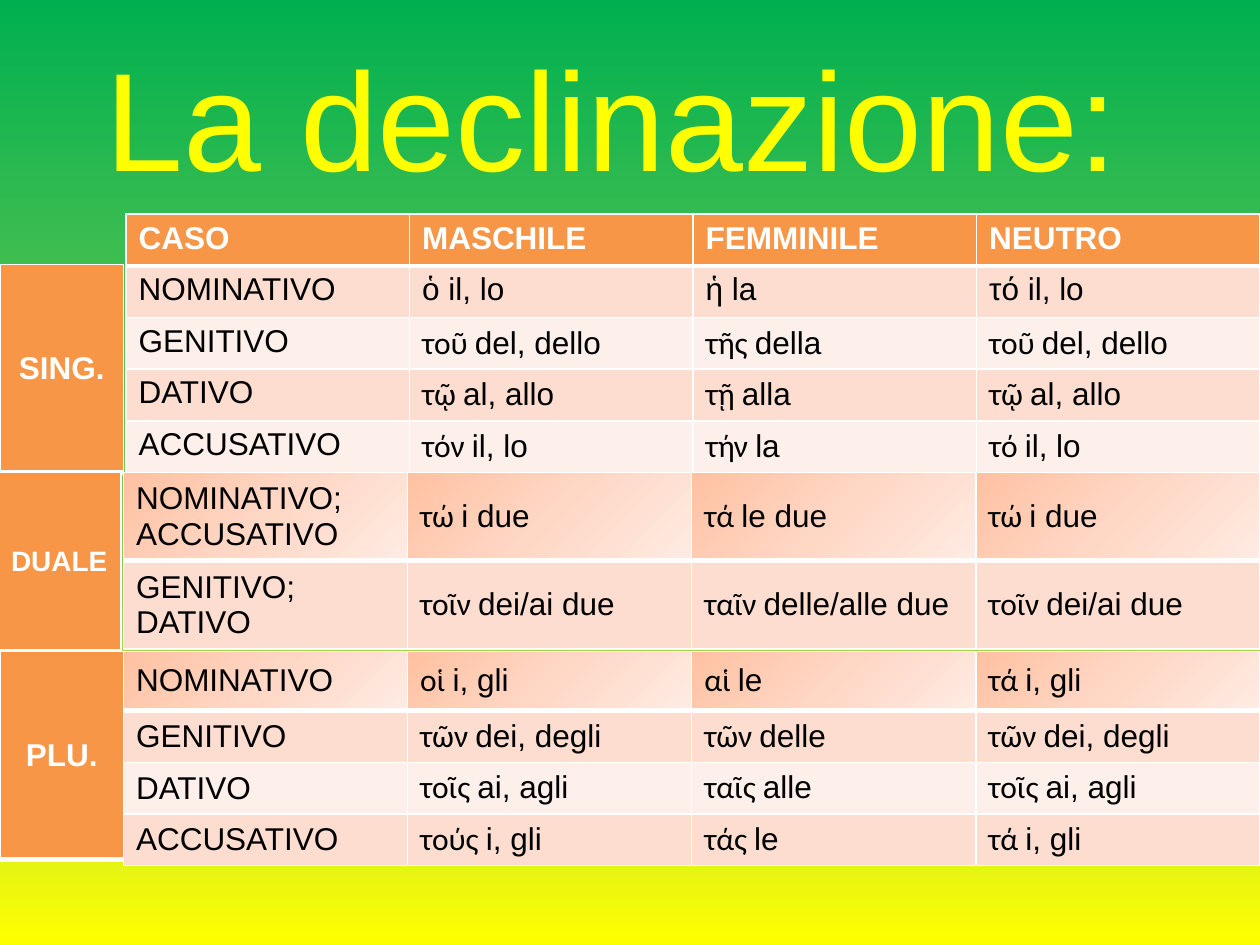
from copy import deepcopy
from dataclasses import dataclass

from lxml.etree import SubElement
from pptx import Presentation
from pptx.dml.color import RGBColor
from pptx.enum.text import MSO_ANCHOR, PP_ALIGN
from pptx.oxml.ns import qn
from pptx.util import Inches, Pt


@dataclass(frozen=True)
class Theme:
    latin: str = "Arial"
    greek: str = "Calibri"
    yellow: str = "FFFF00"
    white: str = "FFFFFF"
    black: str = "000000"
    orange: str = "F79646"
    dark_band: str = "FCDDCF"
    light_band: str = "FDEFE9"
    sunrise: tuple = ((0, "00B050"), (0.64, "92D050"), (1, "FFFF00"))
    peach: tuple = ((0, "FFC1A1"), (0.5, "FFD7C5"), (1, "FFEBE3"))
    title_size: int = 80
    body_size: int = 18
    small_size: int = 16


theme = Theme()


def paint_gradient(fill, owner, stops, angle):
    """Give fill three stops; owner is the XML element that holds it."""
    fill.gradient()
    fill.gradient_angle = angle
    stop_list = next(owner.iter(qn("a:gsLst")))
    stop_list.append(deepcopy(stop_list[0]))
    for stop, (position, color) in zip(fill.gradient_stops, stops):
        stop.position = position
        stop.color.rgb = RGBColor.from_string(color)


def style_cell(cell, paint, color, size, bold, thick_bottom):
    """Set fill, white borders and paragraph fonts of a filled-in cell."""
    if paint == theme.peach:
        paint_gradient(cell.fill, cell._tc, paint, 315)
    else:
        cell.fill.solid()
        cell.fill.fore_color.rgb = RGBColor.from_string(paint)
    properties = cell._tc.get_or_add_tcPr()
    for index, side in enumerate(("lnL", "lnR", "lnT", "lnB")):
        width = Pt(3 if thick_bottom and side == "lnB" else 1)
        border = SubElement(properties, qn(f"a:{side}"), w=str(width))
        border_fill = SubElement(border, qn("a:solidFill"))
        SubElement(border_fill, qn("a:srgbClr"), val=theme.white)
        properties.insert(index, border)
    for paragraph in cell.text_frame.paragraphs:
        font = paragraph.font
        font.name, font.size, font.bold = theme.latin, Pt(size), bold
        font.color.rgb = RGBColor.from_string(color)


prs = Presentation()
prs.slide_width, prs.slide_height = Inches(10), Inches(7.5)
slide = prs.slides.add_slide(prs.slide_layouts[6])
paint_gradient(slide.background.fill, slide.element, theme.sunrise, 270)

title = slide.shapes.add_textbox(Inches(0.51), Inches(0.29), Inches(9), Inches(1.25)).text_frame
title.word_wrap = True
title.vertical_anchor = MSO_ANCHOR.MIDDLE
heading = title.paragraphs[0]
heading.text = "La declinazione: "
heading.alignment = PP_ALIGN.CENTER
heading.font.name, heading.font.size = theme.latin, Pt(theme.title_size)
heading.font.color.rgb = RGBColor.from_string(theme.yellow)

singular = [
    ("CASO", "MASCHILE", "FEMMINILE", "NEUTRO"),
    ("NOMINATIVO", "ὁ il, lo", "ἡ la", "τό il, lo"),
    ("GENITIVO", "τοῦ del, dello", "τῆς della", "τοῦ del, dello"),
    ("DATIVO", "τῷ al, allo", "τῇ alla", "τῷ al, allo"),
    ("ACCUSATIVO", "τόν il, lo", "τήν la", "τό il, lo"),
]
dual = [
    ("NOMINATIVO;\nACCUSATIVO", "τώ i due", "τά le due", "τώ i due"),
    ("GENITIVO;\nDATIVO", "τοῖν dei/ai due", "ταῖν delle/alle due", "τοῖν dei/ai due"),
]
plural = [
    ("NOMINATIVO", "οἱ i, gli", "αἱ le", "τά i, gli"),
    ("GENITIVO", "τῶν dei, degli", "τῶν delle", "τῶν dei, degli"),
    ("DATIVO", "τοῖς ai, agli", "ταῖς alle", "τοῖς ai, agli"),
    ("ACCUSATIVO", "τούς i, gli", "τάς le", "τά i, gli"),
]

# forms, left, top, first row height, other row height
declensions = [
    (singular, 1, 1.7, 0.41, 0.41),
    (dual, 0.98, 3.75, 0.66, 0.66),
    (plural, 0.98, 5.17, 0.47, 0.41),
]
for forms, left, top, first_height, row_height in declensions:
    width = 10 - left
    height = first_height + row_height * (len(forms) - 1)
    table = slide.shapes.add_table(
        len(forms), 4, Inches(left), Inches(top), Inches(width), Inches(height)
    ).table
    table.first_row = table.horz_banding = False
    for column in table.columns:
        column.width = Inches(width / 4)
    for r, row in enumerate(forms):
        table.rows[r].height = Inches(row_height if r else first_height)
        is_header = forms is singular and r == 0
        if r:
            paint = theme.dark_band if r % 2 else theme.light_band
        else:
            paint = theme.orange if is_header else theme.peach
        for c, words in enumerate(row):
            cell = table.cell(r, c)
            top_anchored = forms is singular and (r < 2 or c == 0)
            cell.vertical_anchor = MSO_ANCHOR.TOP if top_anchored else MSO_ANCHOR.MIDDLE
            if c == 0 or top_anchored:
                cell.text = words
            else:
                article, translation = words.split(" ", 1)
                paragraph = cell.text_frame.paragraphs[0]
                greek = paragraph.add_run()
                greek.text = article + " "
                greek.font.name = theme.greek
                paragraph.add_run().text = translation
            color = theme.white if is_header else theme.black
            style_cell(cell, paint, color, theme.body_size, is_header, r == 0)

# label, left, top, height, type size
numbers = [
    ("SING.", 0, 2.1, 1.65, theme.body_size),
    ("DUALE", -0.02, 3.75, 1.42, theme.small_size),
    ("PLU.", 0, 5.17, 1.65, theme.body_size),
]
for label, left, top, height, size in numbers:
    table = slide.shapes.add_table(
        1, 1, Inches(left), Inches(top), Inches(0.98), Inches(height)
    ).table
    table.first_row = table.horz_banding = False
    cell = table.cell(0, 0)
    cell.text = label
    cell.vertical_anchor = MSO_ANCHOR.MIDDLE
    cell.text_frame.paragraphs[0].alignment = PP_ALIGN.CENTER
    style_cell(cell, theme.orange, theme.white, size, True, True)

prs.save("out.pptx")
